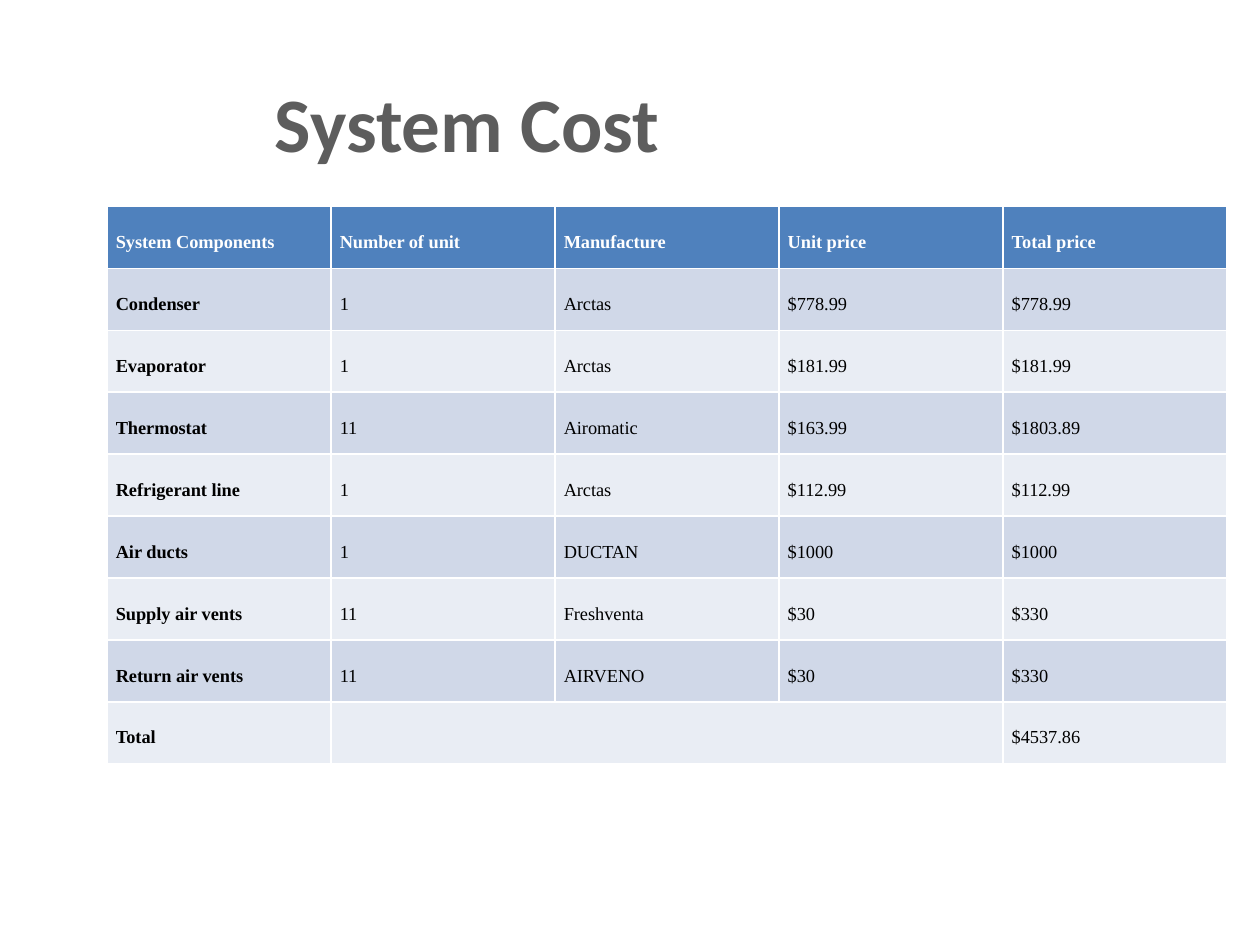
from dataclasses import astuple, dataclass

from lxml.etree import SubElement
from pptx import Presentation
from pptx.dml.color import RGBColor
from pptx.enum.text import MSO_ANCHOR as Anchor, PP_ALIGN as Align
from pptx.oxml.ns import qn
from pptx.slide import Slide
from pptx.table import _Cell as Cell
from pptx.util import Pt

HEADER_FILL = "4F81BD"
BAND_FILLS = ("D0D8E8", "E9EDF4")
WHITE, BLACK, GREY = "FFFFFF", "000000", "5D5D5D"
COLUMN_WIDTH, ROW_HEIGHT = 128, 35.4


@dataclass
class CostRow:
    component: str
    units: str
    maker: str
    unit_price: str
    total_price: str


HEADER = CostRow("System Components", "Number of unit", "Manufacture", "Unit price", "Total price")
COSTS = [
    CostRow("Condenser", "1", "Arctas", "$778.99", "$778.99"),
    CostRow("Evaporator", "1", "Arctas", "$181.99", "$181.99"),
    CostRow("Thermostat", "11", "Airomatic", "$163.99", "$1803.89"),
    CostRow("Refrigerant line", "1", "Arctas", "$112.99", "$112.99"),
    CostRow("Air ducts", "1", "DUCTAN", "$1000", "$1000"),
    CostRow("Supply air vents", "11", "Freshventa", "$30", "$330"),
    CostRow("Return air vents", "11", "AIRVENO", "$30", "$330"),
    CostRow("Total", "", "", "", "$4537.86"),
]


def color(value: str) -> RGBColor:
    return RGBColor.from_string(value)


def add_borders(cell: Cell, line_color: str, width: float) -> None:
    properties = cell._tc.get_or_add_tcPr()
    for position, side in enumerate(("lnL", "lnR", "lnT", "lnB")):
        line = properties.makeelement(qn(f"a:{side}"), {"w": str(Pt(width))})
        fill = SubElement(line, qn("a:solidFill"))
        SubElement(fill, qn("a:srgbClr"), val=line_color)
        properties.insert(position, line)


def style_cell(cell: Cell, text: str, fill: str, text_color: str, bold: bool) -> None:
    cell.fill.solid()
    cell.fill.fore_color.rgb = color(fill)
    add_borders(cell, WHITE, 1)
    cell.vertical_anchor = Anchor.MIDDLE
    cell.margin_left = cell.margin_right = Pt(5)
    cell.margin_top = cell.margin_bottom = Pt(0)
    cell.text = text
    para = cell.text_frame.paragraphs[0]
    para.line_spacing = 1.5
    para.font.name = "Times New Roman"
    para.font.size = Pt(10.5)
    para.font.bold = bold
    para.font.color.rgb = color(text_color)


def add_title(page: Slide, text: str) -> None:
    box = page.shapes.add_textbox(Pt(-57), Pt(24.5), Pt(648), Pt(90))
    frame = box.text_frame
    frame.word_wrap = True
    frame.vertical_anchor = Anchor.MIDDLE
    para = frame.paragraphs[0]
    para.text = text
    para.alignment = Align.CENTER
    para.font.name = "Calibri"
    para.font.size = Pt(44)
    para.font.bold = True
    para.font.color.rgb = color(GREY)


def add_cost_table(page: Slide, rows: list[CostRow]) -> None:
    columns = len(astuple(HEADER))
    table = page.shapes.add_table(
        len(rows), columns, Pt(61.2), Pt(118),
        Pt(COLUMN_WIDTH * columns), Pt(ROW_HEIGHT * len(rows)),
    ).table
    for column in table.columns:
        column.width = Pt(COLUMN_WIDTH)
    for index, row in enumerate(rows):
        table.rows[index].height = Pt(ROW_HEIGHT)
        is_header = index == 0
        fill = HEADER_FILL if is_header else BAND_FILLS[(index - 1) % 2]
        text_color = WHITE if is_header else BLACK
        for position, text in enumerate(astuple(row)):
            bold = is_header or position == 0
            style_cell(table.cell(index, position), text, fill, text_color, bold)
    last = len(rows) - 1
    table.cell(last, 1).merge(table.cell(last, 3))


def main() -> None:
    deck = Presentation()
    deck.slide_width, deck.slide_height = Pt(720), Pt(540)
    page = deck.slides.add_slide(deck.slide_layouts[6])
    add_title(page, "System Cost")
    add_cost_table(page, [HEADER, *COSTS])
    deck.save("out.pptx")


if __name__ == "__main__":
    main()
